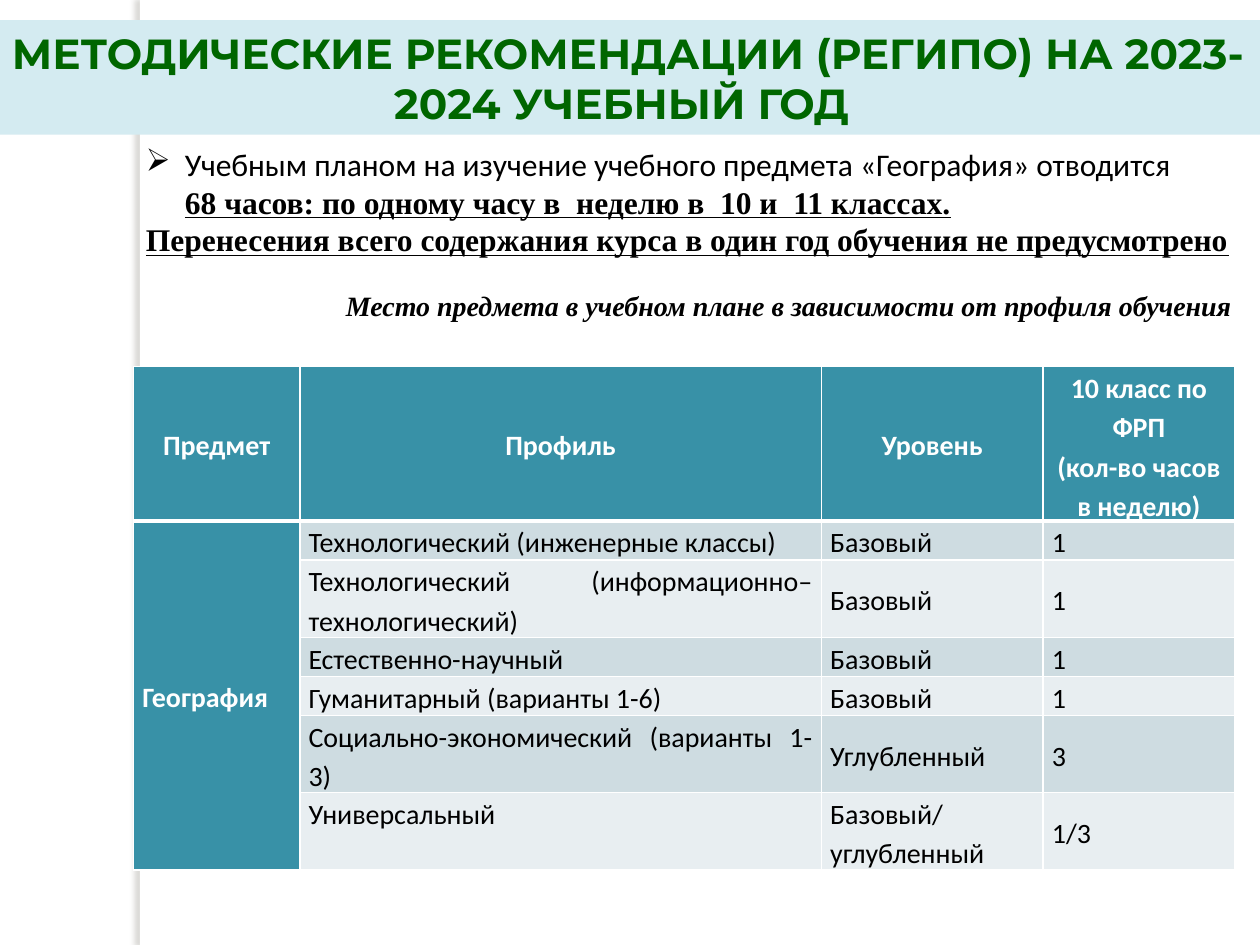
from lxml import etree
from pptx import Presentation
from pptx.dml.color import RGBColor
from pptx.enum import shapes, text
from pptx.oxml import parse_xml
from pptx.oxml.ns import nsdecls, qn
from pptx.util import Inches, Pt

WHITE, BLACK, TEAL = "FFFFFF", "000000", "3891A7"
BANDS = ["CEDCE1", "E8EEF1"]
SERIF = "Times New Roman"
HEADERS = [["Предмет"], ["Профиль"], ["Уровень"],
           ["10 класс по ФРП", "(кол-во часов в неделю)"]]
PROFILES = [
    ("Технологический (инженерные классы)", "Базовый", "1"),
    ("Технологический (информационно–технологический)", "Базовый", "1"),
    ("Естественно-научный", "Базовый", "1"),
    ("Гуманитарный (варианты 1-6)", "Базовый", "1"),
    ("Социально-экономический (варианты 1-3)", "Углубленный", "3"),
    ("Универсальный", "Базовый/углубленный", "1/3"),
]
COLUMNS = [1.32, 4.14, 1.76, 1.52]
ROWS = [1.22, 0.31, 0.61, 0.31, 0.31, 0.31, 0.61]


def rgb(value):
    return RGBColor.from_string(value)


def paint(sp, color):
    sp.fill.solid()
    sp.fill.fore_color.rgb = rgb(color)


def add_run(p, words, size, font, color=BLACK, bold=False, italic=False, underline=False):
    r = p.add_run()
    r.text = words
    f = r.font
    f.size, f.name, f.color.rgb = Pt(size), font, rgb(color)
    f.bold, f.italic, f.underline = bold, italic, underline


def indent(p, left, first):
    pPr = p._p.get_or_add_pPr()
    pPr.set("marL", str(Inches(left)))
    pPr.set("indent", str(Inches(first)))
    return pPr


def add_text_box(s, left, top, width, height, wrap=True):
    tf = s.shapes.add_textbox(Inches(left), Inches(top), Inches(width), Inches(height)).text_frame
    tf.word_wrap = wrap
    return tf


def add_side_strip(s):
    """White strip at the very back, casting a soft shadow to its left."""
    sp = s.shapes.add_shape(shapes.MSO_SHAPE.RECTANGLE,
                            Inches(1.11), 0, Inches(0.08), Inches(7.5))
    paint(sp, WHITE)
    sp.line.fill.background()
    sp._element.spPr.append(parse_xml(
        f'<a:effectLst {nsdecls("a")}><a:outerShdw blurRad="{Pt(3)}" dist="{Pt(3)}" '
        'dir="10800000" rotWithShape="0"><a:srgbClr val="736F63"><a:alpha val="25000"/>'
        '</a:srgbClr></a:outerShdw></a:effectLst>'))
    s.shapes._spTree.insert(2, sp._element)


def set_title(s, words):
    sp = s.shapes.title
    sp.left, sp.top, sp.width, sp.height = (Inches(v) for v in (-0.04, 0.16, 10.04, 0.91))
    paint(sp, "D4EBF1")
    tf = sp.text_frame
    tf.word_wrap = True
    tf.auto_size = text.MSO_AUTO_SIZE.NONE
    tf.vertical_anchor = text.MSO_ANCHOR.MIDDLE
    p = tf.paragraphs[0]
    p.alignment = text.PP_ALIGN.CENTER
    p.line_spacing = 1.0
    p.space_before = Pt(0)
    add_run(p, words, 24, "Montserrat", "006600", bold=True)


def add_hours_note(s):
    tf = add_text_box(s, 1.06, 1.1, 8.82, 1.01)
    p = tf.paragraphs[0]
    pPr = indent(p, 0.31, -0.31)
    etree.SubElement(pPr, qn("a:buFont"), typeface="Wingdings")
    etree.SubElement(pPr, qn("a:buChar"), char="Ø")
    add_run(p, "Учебным планом на изучение учебного предмета «География» отводится", 18, "Calibri")
    p = tf.add_paragraph()
    indent(p, 0.31, 0)
    add_run(p, "68 часов: по одному часу в\u00a0 неделю в\u00a0 10 и\u00a0 11 классах.",
            18, SERIF, bold=True, underline=True)
    add_run(tf.add_paragraph(),
            "Перенесения всего содержания курса в один год обучения не предусмотрено",
            18, SERIF, bold=True, underline=True)


def add_caption(s):
    p = add_text_box(s, 2.11, 2.24, 7.91, 0.64, wrap=False).paragraphs[0]
    p.alignment = text.PP_ALIGN.CENTER
    indent(p, 0, 0.39)
    add_run(p, "Место предмета в учебном плане в зависимости от профиля обучения",
            16, SERIF, bold=True, italic=True)


def set_borders(cell, top=1, bottom=1):
    tcPr = cell._tc.get_or_add_tcPr()
    for i, (side, width) in enumerate(zip("LRTB", (1, 1, top, bottom))):
        tcPr.insert(i, parse_xml(
            f'<a:ln{side} {nsdecls("a")} w="{Pt(width)}"><a:solidFill>'
            f'<a:srgbClr val="{WHITE}"/></a:solidFill></a:ln{side}>'))


def fill_cell(cell, lines, fill, align, color=BLACK, bold=False, middle=True):
    paint(cell, fill)
    cell.margin_left = cell.margin_right = Inches(0.07)
    cell.margin_top = cell.margin_bottom = 0
    cell.vertical_anchor = text.MSO_ANCHOR.MIDDLE if middle else text.MSO_ANCHOR.TOP
    tf = cell.text_frame
    for i, line in enumerate(lines):
        p = tf.add_paragraph() if i else tf.paragraphs[0]
        p.alignment = align
        p.line_spacing = 1.15
        add_run(p, line, 16, "Calibri", color, bold)


def add_profile_table(s):
    table = s.shapes.add_table(len(ROWS), len(COLUMNS), Inches(1.06), Inches(2.91),
                               Inches(sum(COLUMNS)), Inches(sum(ROWS))).table
    for column, width in zip(table.columns, COLUMNS):
        column.width = Inches(width)
    for row, height in zip(table.rows, ROWS):
        row.height = Inches(height)
    center, justify = text.PP_ALIGN.CENTER, text.PP_ALIGN.JUSTIFY
    for c, lines in enumerate(HEADERS):
        fill_cell(table.cell(0, c), lines, TEAL, center, WHITE, True, middle=len(lines) == 1)
    subject = table.cell(1, 0)
    subject.merge(table.cell(len(PROFILES), 0))
    fill_cell(subject, ["География"], TEAL, justify, WHITE, True)
    for r, profile in enumerate(PROFILES, 1):
        for c, words in enumerate(profile, 1):
            fill_cell(table.cell(r, c), [words], BANDS[(r - 1) % 2], justify, middle=c > 1)
    for r in range(len(ROWS)):
        for c in range(len(COLUMNS)):
            set_borders(table.cell(r, c), top=3 if r == 1 else 1, bottom=3 if r == 0 else 1)


def main():
    prs = Presentation()
    prs.slide_width, prs.slide_height = Inches(10), Inches(7.5)
    s = prs.slides.add_slide(prs.slide_layouts[5])
    add_side_strip(s)
    set_title(s, "МЕТОДИЧЕСКИЕ РЕКОМЕНДАЦИИ (РЕГИПО) НА 2023-2024 УЧЕБНЫЙ ГОД ")
    add_hours_note(s)
    add_profile_table(s)
    add_caption(s)
    prs.save("out.pptx")


if __name__ == "__main__":
    main()
